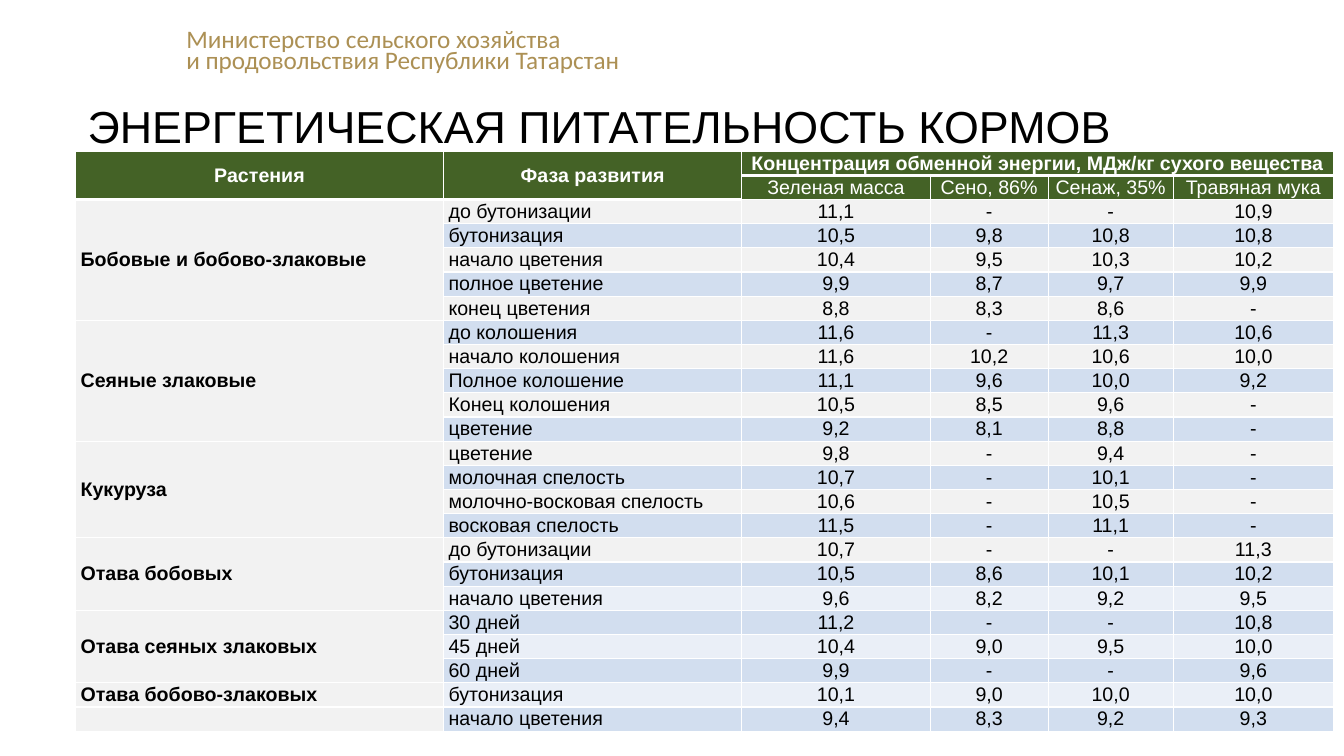
from dataclasses import dataclass

from lxml import etree
from pptx import Presentation
from pptx.dml.color import RGBColor
from pptx.enum import text
from pptx.oxml import ns
from pptx.util import Pt


@dataclass(frozen=True)
class Theme:
    gold: str = "AC9054"
    green: str = "446226"
    gray: str = "F2F2F2"
    blue: str = "D2DEEF"
    pale: str = "EAEFF7"
    white: str = "FFFFFF"
    black: str = "000000"
    sans: str = "Arial"
    brand: str = "Calibri"
    title: int = 32
    owner: int = 18
    body: int = 14
    thin: int = 1
    thick: int = 3


CENTER = text.PP_ALIGN.CENTER
JUSTIFY = text.PP_ALIGN.JUSTIFY

OWNER = "Министерство сельского хозяйства\nи продовольствия Республики Татарстан"
TITLE = "ЭНЕРГЕТИЧЕСКАЯ ПИТАТЕЛЬНОСТЬ КОРМОВ"
HEADS = [
    ["Растения", "Фаза развития", "Концентрация обменной энергии, МДж/кг сухого вещества", "", "", ""],
    ["", "", "Зеленая масса", "Сено, 86%", "Сенаж, 35%", "Травяная мука"],
]
WIDTHS = [262.8, 213.1, 134.6, 84.2, 89.4, 114.5]
HEIGHT = 17.28
PLANTS = [
    ("Бобовые и бобово-злаковые", [
        ("до бутонизации", "11,1 - - 10,9"),
        ("бутонизация", "10,5 9,8 10,8 10,8"),
        ("начало цветения", "10,4 9,5 10,3 10,2"),
        ("полное цветение", "9,9 8,7 9,7 9,9"),
        ("конец цветения", "8,8 8,3 8,6 -"),
    ]),
    ("Сеяные злаковые", [
        ("до колошения", "11,6 - 11,3 10,6"),
        ("начало колошения", "11,6 10,2 10,6 10,0"),
        ("Полное колошение", "11,1 9,6 10,0 9,2"),
        ("Конец колошения", "10,5 8,5 9,6 -"),
        ("цветение", "9,2 8,1 8,8 -"),
    ]),
    ("Кукуруза", [
        ("цветение", "9,8 - 9,4 -"),
        ("молочная спелость", "10,7 - 10,1 -"),
        ("молочно-восковая спелость", "10,6 - 10,5 -"),
        ("восковая спелость", "11,5 - 11,1 -"),
    ]),
    ("Отава бобовых", [
        ("до бутонизации", "10,7 - - 11,3"),
        ("бутонизация", "10,5 8,6 10,1 10,2"),
        ("начало цветения", "9,6 8,2 9,2 9,5"),
    ]),
    ("Отава сеяных злаковых", [
        ("30 дней", "11,2 - - 10,8"),
        ("45 дней", "10,4 9,0 9,5 10,0"),
        ("60 дней", "9,9 - - 9,6"),
    ]),
    ("Отава бобово-злаковых", [("бутонизация", "10,1 9,0 10,0 10,0")]),
    ("", [("начало цветения", "9,4 8,3 9,2 9,3")]),
]


class Deck:
    def __init__(self, theme):
        self.theme = theme
        self.file = Presentation()
        self.file.slide_width, self.file.slide_height = Pt(960), Pt(540)
        self.slide = self.file.slides.add_slide(self.file.slide_layouts[6])

    def style(self, para, face, size, color, bold=False):
        for run in para.runs:
            run.font.name = face
            run.font.size = Pt(size)
            run.font.bold = bold
            run.font.color.rgb = RGBColor.from_string(color)

    def label(self, words, box, face, size, color, wrap=True, lead=1.0, inset=0):
        frame = self.slide.shapes.add_textbox(*map(Pt, box)).text_frame
        frame.word_wrap = wrap
        frame.auto_size = text.MSO_AUTO_SIZE.SHAPE_TO_FIT_TEXT
        frame.text = words
        for para in frame.paragraphs:
            para.line_spacing = lead
            if inset:
                para._p.get_or_add_pPr().set("marL", str(Pt(inset)))
            self.style(para, face, size, color)

    def border(self, cell, top, bottom):
        props = cell._tc.get_or_add_tcPr()
        for side, width in zip("LRTB", (self.theme.thin, self.theme.thin, top, bottom)):
            line = etree.SubElement(props, ns.qn(f"a:ln{side}"), w=str(Pt(width)))
            fill = etree.SubElement(line, ns.qn("a:solidFill"))
            etree.SubElement(fill, ns.qn("a:srgbClr"), val=self.theme.white)

    def cell(self, cell, words, fill, color, align, bold, top, bottom):
        self.border(cell, top, bottom)
        cell.fill.solid()
        cell.fill.fore_color.rgb = RGBColor.from_string(fill)
        cell.margin_left = cell.margin_right = Pt(3.6)
        cell.margin_top = cell.margin_bottom = 0
        cell.vertical_anchor = text.MSO_ANCHOR.MIDDLE
        para = cell.text_frame.paragraphs[0]
        para.alignment = align
        if words:
            para.text = words
            self.style(para, self.theme.sans, self.theme.body, color, bold)
        else:
            etree.SubElement(para._p, ns.qn("a:endParaRPr"), sz=str(self.theme.body * 100))

    def table(self, left, top, heads, plants):
        look = self.theme
        rows = heads + [
            ["" if n else plant, phase, *nums.split()]
            for plant, phases in plants
            for n, (phase, nums) in enumerate(phases)
        ]
        grid = self.slide.shapes.add_table(
            len(rows), len(WIDTHS), Pt(left), Pt(top), Pt(sum(WIDTHS)), Pt(HEIGHT * len(rows))
        ).table
        for col, width in zip(grid.columns, WIDTHS):
            col.width = Pt(width)
        for r, row in enumerate(rows):
            grid.rows[r].height = Pt(HEIGHT)
            head = r < len(heads)
            band = look.blue if r % 2 else look.gray if r < 18 else look.pale
            for c, words in enumerate(row):
                fill = look.green if head else band if c else look.gray
                color = look.white if head else look.black
                align = CENTER if head or c > 1 else JUSTIFY
                bold = r == 0 or (not head and c == 0)
                over = look.thick if r == 1 or (r == 2 and c < 2) else look.thin
                under = look.thick if r == 0 or (r == 1 and c < 2) else look.thin
                self.cell(grid.cell(r, c), words, fill, color, align, bold, over, under)
        for c in (0, 1):
            grid.cell(0, c).merge(grid.cell(1, c))
        grid.cell(0, 2).merge(grid.cell(0, 5))
        start = len(heads)
        for plant, phases in plants:
            end = start + len(phases)
            if len(phases) > 1:
                grid.cell(start, 0).merge(grid.cell(end - 1, 0))
            start = end


def main():
    look = Theme()
    deck = Deck(look)
    deck.label(OWNER, (126, 18.7, 327.6, 38.9), look.brand, look.owner, look.gold, wrap=False, lead=0.7)
    deck.table(54, 108, HEADS, PLANTS)
    deck.label(TITLE, (41.8, 67, 918, 46), look.sans, look.title, look.black, inset=13.7)
    deck.file.save("out.pptx")


if __name__ == "__main__":
    main()
